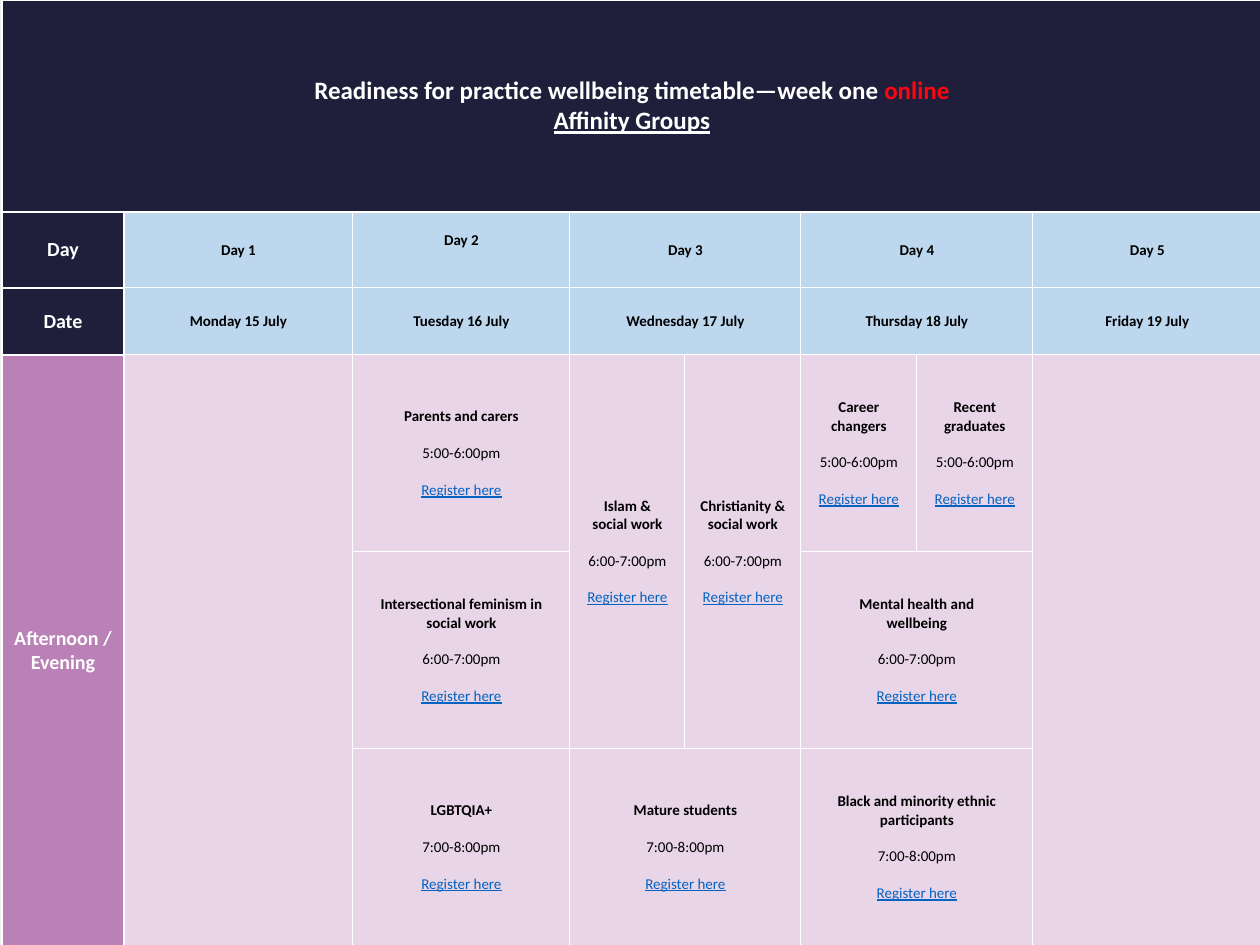
from lxml import etree
from pptx import Presentation
from pptx import util as u
from pptx.dml.color import RGBColor
from pptx.enum import text
from pptx.oxml.ns import qn

SCALE = 914400 // 90
WIDE, TALL = 1260, 945
COLS = [122, 229, 217, 115, 116, 116, 116, 229]
ROWS = [212, 76, 67, 197, 197, 197]
NAVY, BLUE, PLUM, PINK = "1F1F3C", "BDD7EE", "BA81B7", "E8D5E7"
WHITE, BLACK, RED, LINK = "FFFFFF", "000000", "FF050F", "0563C1"
GAP = 14.65

DAYS = [
    (1, 1, "Day 1", "Monday 15 July"),
    (2, 1, "Day 2", "Tuesday 16 July"),
    (3, 2, "Day 3", "Wednesday 17 July"),
    (5, 2, "Day 4", "Thursday 18 July"),
    (7, 1, "Day 5", "Friday 19 July"),
]
GROUPS = [
    (3, 2, 1, 1, ["Parents and carers"], "5:00-6:00pm"),
    (3, 3, 2, 1, ["Islam &", "social work"], "6:00-7:00pm"),
    (3, 4, 2, 1, ["Christianity &", "social work"], "6:00-7:00pm"),
    (3, 5, 1, 1, ["Career", "changers"], "5:00-6:00pm"),
    (3, 6, 1, 1, ["Recent", "graduates"], "5:00-6:00pm"),
    (4, 2, 1, 1, ["Intersectional feminism in social work"], "6:00-7:00pm"),
    (4, 5, 1, 2, ["Mental health and", "wellbeing"], "6:00-7:00pm"),
    (5, 2, 1, 1, ["LGBTQIA+"], "7:00-8:00pm"),
    (5, 3, 1, 2, ["Mature students"], "7:00-8:00pm"),
    (5, 5, 1, 2, ["Black and minority ethnic", "participants"], "7:00-8:00pm"),
]


def px(n):
    """Turn pixels into EMU."""
    return u.Emu(n * SCALE)


def paint(fill, tone):
    """Fill with one solid colour."""
    fill.solid()
    fill.fore_color.rgb = RGBColor.from_string(tone)


def edge(cell, left=1, right=1, top=1, low=1):
    """Draw white borders of the given point widths."""
    props = cell._tc.get_or_add_tcPr()
    for side, width in zip("LRTB", (left, right, top, low)):
        line = etree.SubElement(props, qn(f"a:ln{side}"), w=str(u.Pt(width)))
        solid = etree.SubElement(line, qn("a:solidFill"))
        etree.SubElement(solid, qn("a:srgbClr"), val=WHITE)


def style(font, size, tone, bold=True, under=False):
    """Set the look of a font."""
    font.name, font.size = "Calibri", u.Pt(size)
    font.bold, font.underline = bold, under
    font.color.rgb = RGBColor.from_string(tone)


def block(grid, row, col, tone, down=1, over=1):
    """Merge, fill and centre a cell."""
    cell = grid.cell(row, col)
    if down * over > 1:
        cell.merge(grid.cell(row + down - 1, col + over - 1))
    paint(cell.fill, tone)
    cell.vertical_anchor = text.MSO_ANCHOR.MIDDLE
    return cell


def write(cell, lines):
    """Write centred lines of wording, size, colour, bold, underline and gap."""
    frame = cell.text_frame
    for i, (words, size, tone, bold, under, gap) in enumerate(lines):
        para = frame.add_paragraph() if i else frame.paragraphs[0]
        para.text = words
        para.alignment = text.PP_ALIGN.CENTER
        para.space_before = u.Pt(gap)
        style(para.font, size, tone, bold, under)


def label(cell, words, size, tone):
    """Write one bold line."""
    write(cell, [(words, size, tone, True, False, 0)])


def banner(grid):
    """Write the heading row."""
    cell = block(grid, 0, 0, NAVY, over=len(COLS))
    write(cell, [
        ("Readiness for practice wellbeing timetable—week one ", 20, WHITE, True, False, 0),
        ("Affinity Groups", 20, WHITE, True, True, 0),
    ])
    run = cell.text_frame.paragraphs[0].add_run()
    run.text = "online"
    style(run.font, 20, RED)


def sides(grid):
    """Write the row headings."""
    for row, down, words, tone in [
        (1, 1, "Day", NAVY), (2, 1, "Date", NAVY), (3, 3, "Afternoon / Evening", PLUM),
    ]:
        label(block(grid, row, 0, tone, down), words, 16, WHITE)


def heads(grid):
    """Write the days and dates."""
    for col, over, day, date in DAYS:
        for row, words in ((1, day), (2, date)):
            label(block(grid, row, col, BLUE, over=over), words, 12, BLACK)
    grid.cell(1, 2).margin_bottom = px(23)


def event(grid, row, col, down, over, name, time):
    """Write one group with its time and register line."""
    lines = [(part, 12, BLACK, True, False, 0) for part in name]
    lines.append((time, 12, BLACK, False, False, GAP))
    lines.append(("Register here", 12, LINK, False, True, GAP))
    write(block(grid, row, col, PINK, down, over), lines)


def build(slide):
    """Add the empty timetable grid with its borders."""
    frame = slide.shapes.add_table(
        len(ROWS), len(COLS), px(2), 0, px(sum(COLS)), px(sum(ROWS)))
    grid = frame.table
    grid.first_row = grid.horz_banding = False
    for col, wide in zip(grid.columns, COLS):
        col.width = px(wide)
    for row, tall in zip(grid.rows, ROWS):
        row.height = px(tall)
    for r in range(len(ROWS)):
        for c in range(len(COLS)):
            if r and not c:
                edge(grid.cell(r, c), left=1.5, top=1 if r == 1 else 1.5, low=1.5)
            else:
                edge(grid.cell(r, c))
    return grid


def main():
    """Build and save the timetable slide."""
    deck = Presentation()
    deck.slide_width, deck.slide_height = px(WIDE), px(TALL)
    slide = deck.slides.add_slide(deck.slide_layouts[6])
    paint(slide.background.fill, "F0EEE9")
    grid = build(slide)
    banner(grid)
    sides(grid)
    heads(grid)
    for col in (1, 7):
        block(grid, 3, col, PINK, down=3)
    for group in GROUPS:
        event(grid, *group)
    deck.save("out.pptx")


if __name__ == "__main__":
    main()
